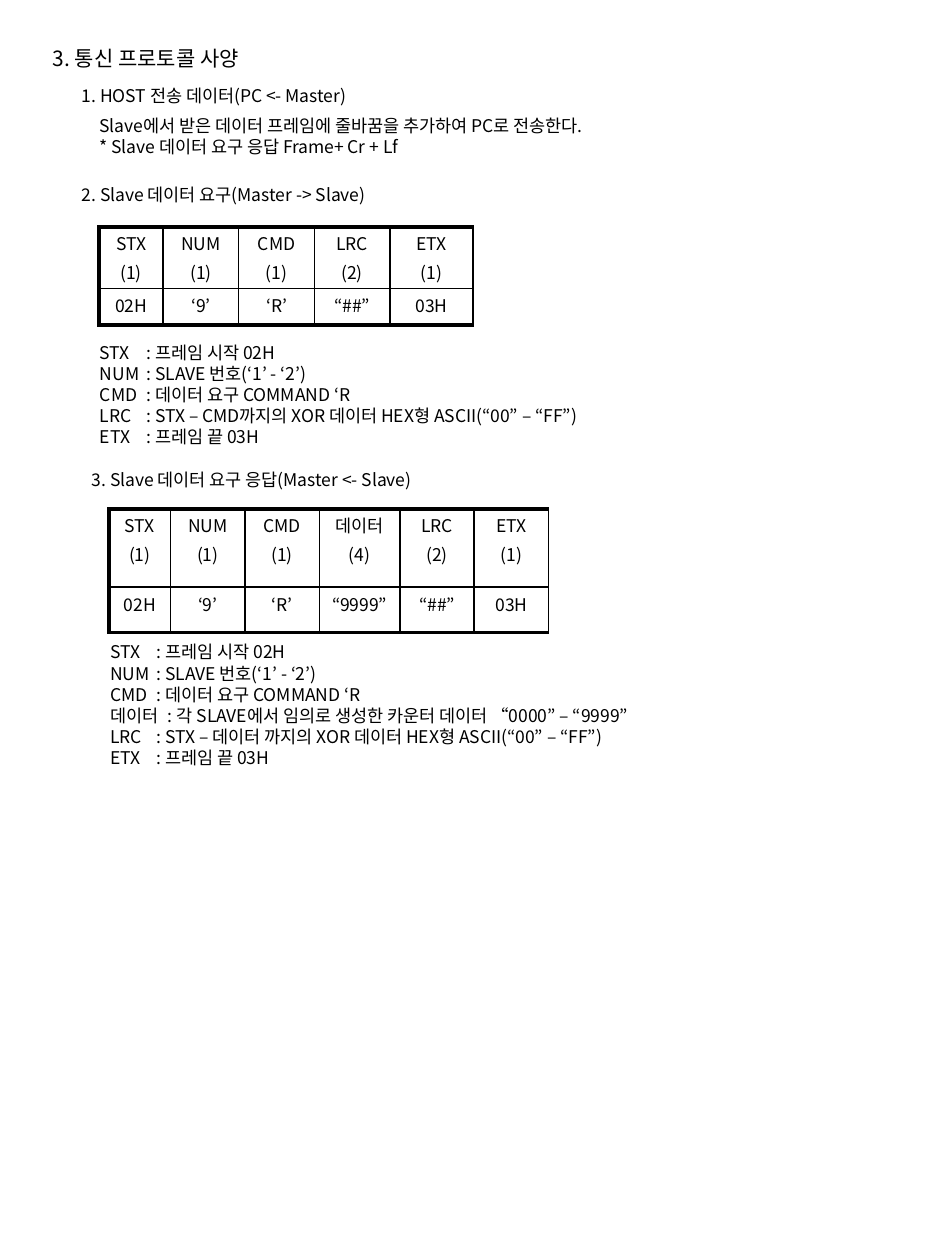
from lxml import etree
from pptx import Presentation
from pptx.dml.color import RGBColor
from pptx.enum.text import MSO_ANCHOR, PP_ALIGN
from pptx.oxml.ns import qn
from pptx.util import Inches, Pt

MIDDLE, TOP = MSO_ANCHOR.MIDDLE, MSO_ANCHOR.TOP
LEFT, CENTER, JUSTIFY = PP_ALIGN.LEFT, PP_ALIGN.CENTER, PP_ALIGN.JUSTIFY
COLORS = {"ink": "000000", "paper": "FFFFFF"}
FONT = "Noto Sans CJK KR"
WIDTH, HEIGHT = Inches(7.5), Inches(10)
COL, ROW = WIDTH / 75, HEIGHT / 100
BODY, HEADING = 10, 12
THIN, THICK = 1, 2.25
LINE = 1.21
LEGEND_STOPS = (3.7, 4.6)
LINE_ROWS, PAD_ROWS = 1.68, 1


def add_run(p, text, size):
    r = p.add_run()
    r.text = text
    r.font.size = Pt(size)
    r.font.name = FONT
    r.font.color.rgb = RGBColor.from_string(COLORS["ink"])
    etree.SubElement(r.font._element, qn("a:ea"), typeface=FONT)


def add_tab_stops(p, stops):
    tabs = etree.SubElement(p._p.get_or_add_pPr(), qn("a:tabLst"))
    for stop in stops:
        etree.SubElement(tabs, qn("a:tab"), pos=str(int(stop * COL)), algn="l")


def add_text(s, box, lines, size=BODY, align=LEFT, anchor=MIDDLE, stops=()):
    x, y, w, h = box
    tf = s.shapes.add_textbox(int(x * COL), int(y * ROW), int(w * COL), int(h * ROW)).text_frame
    tf.word_wrap = True
    tf.vertical_anchor = anchor
    for i, line in enumerate(lines):
        p = tf.add_paragraph() if i else tf.paragraphs[0]
        p.alignment = align
        p.line_spacing = Pt(size * LINE)
        if stops:
            add_tab_stops(p, stops)
        add_run(p, line, size)


def set_borders(cell, sides):
    tc_pr = cell._tc.get_or_add_tcPr()
    for i, (side, width) in enumerate(sides.items()):
        ln = etree.Element(qn("a:" + side), w=str(int(Pt(width))))
        fill = etree.SubElement(ln, qn("a:solidFill"))
        etree.SubElement(fill, qn("a:srgbClr"), val=COLORS["ink"])
        tc_pr.insert(i, ln)


def fill_cell(cell, lines):
    cell.margin_left = cell.margin_right = int(0.7 * COL)
    cell.margin_top, cell.margin_bottom = int(0.3 * ROW), 0
    cell.fill.solid()
    cell.fill.fore_color.rgb = RGBColor.from_string(COLORS["paper"])
    for i, line in enumerate(lines):
        p = cell.text_frame.add_paragraph() if i else cell.text_frame.paragraphs[0]
        p.alignment = CENTER
        p.space_before = Pt(BODY * 0.2)
        add_run(p, line, BODY)


def frame_table(s, x, y, fields, widths, heights):
    table = s.shapes.add_table(2, len(fields), int(x * COL), int(y * ROW),
                               int(sum(widths) * COL), int(sum(heights) * ROW)).table
    table.first_row = table.horz_banding = False
    for row, height in zip(table.rows, heights):
        row.height = int(height * ROW)
    for c, ((name, length, value), width) in enumerate(zip(fields, widths)):
        table.columns[c].width = int(width * COL)
        for r, lines in enumerate(((name, f"({length})"), (value,))):
            cell = table.cell(r, c)
            fill_cell(cell, lines)
            set_borders(cell, {
                "lnL": THIN if c else THICK,
                "lnR": THIN,
                "lnT": THIN if r else THICK,
                "lnB": THICK if r else THIN,
            })


def host_section(s, x, y):
    add_text(s, (x, y, 25.1, 2.7), ["1. HOST 전송 데이터(PC <- Master)"])
    add_text(s, (x + 1.4, y + 2.4, 45.4, 4.4), [
        "Slave에서 받은 데이터 프레임에 줄바꿈을 추가하여 PC로 전송한다.",
        "* Slave 데이터 요구 응답 Frame+ Cr + Lf",
    ])


def frame_section(s, x, y, title, table_top, fields, widths, heights, legend_top, legend):
    add_text(s, (x, y, 30, 2.7), [title])
    frame_table(s, x + 2.35, y + table_top, fields, widths, heights)
    lines = [f"{name}\t: {meaning}" for name, meaning in legend]
    add_text(s, (x + 1.45, y + legend_top, 47.7, len(lines) * LINE_ROWS + PAD_ROWS),
             lines, stops=LEGEND_STOPS)


def main():
    prs = Presentation()
    prs.slide_width, prs.slide_height = WIDTH, HEIGHT
    s = prs.slides.add_slide(prs.slide_layouts[6])

    stx, num, cmd = ("STX", 1, "02H"), ("NUM", 1, "‘9’"), ("CMD", 1, "‘R’")
    lrc, etx = ("LRC", 2, "“##”"), ("ETX", 1, "03H")
    opening = [("STX", "프레임 시작 02H"), ("NUM", "SLAVE 번호(‘1’ - ‘2’)"),
               ("CMD", "데이터 요구 COMMAND ‘R")]
    closing = [("ETX", "프레임 끝 03H")]

    add_text(s, (3.2, 3.1, 26.5, 3.8), ["3. 통신 프로토콜 사양"], HEADING, JUSTIFY, TOP)
    host_section(s, 5.5, 6.2)
    frame_section(
        s, 5.5, 14.1, "2. Slave 데이터 요구(Master -> Slave)",
        3.9, [stx, num, cmd, lrc, etx], [5.1, 6, 6, 6, 6.6], [4.9, 2.9], 12.5,
        opening + [("LRC", "STX – CMD까지의 XOR 데이터 HEX형 ASCII(“00” – “FF”)")] + closing)
    frame_section(
        s, 6.3, 36.7, "3. Slave 데이터 요구 응답(Master <- Slave)",
        3.7, [stx, num, cmd, ("데이터", 4, "“9999”"), lrc, etx],
        [4.9, 5.9, 5.9, 6.4, 5.9, 5.9], [6.2, 3.6], 13.7,
        opening + [("데이터", "각 SLAVE에서 임의로 생성한 카운터 데이터 “0000” – “9999”"),
                   ("LRC", "STX – 데이터 까지의 XOR 데이터 HEX형 ASCII(“00” – “FF”)")] + closing)
    prs.save("out.pptx")


if __name__ == "__main__":
    main()
